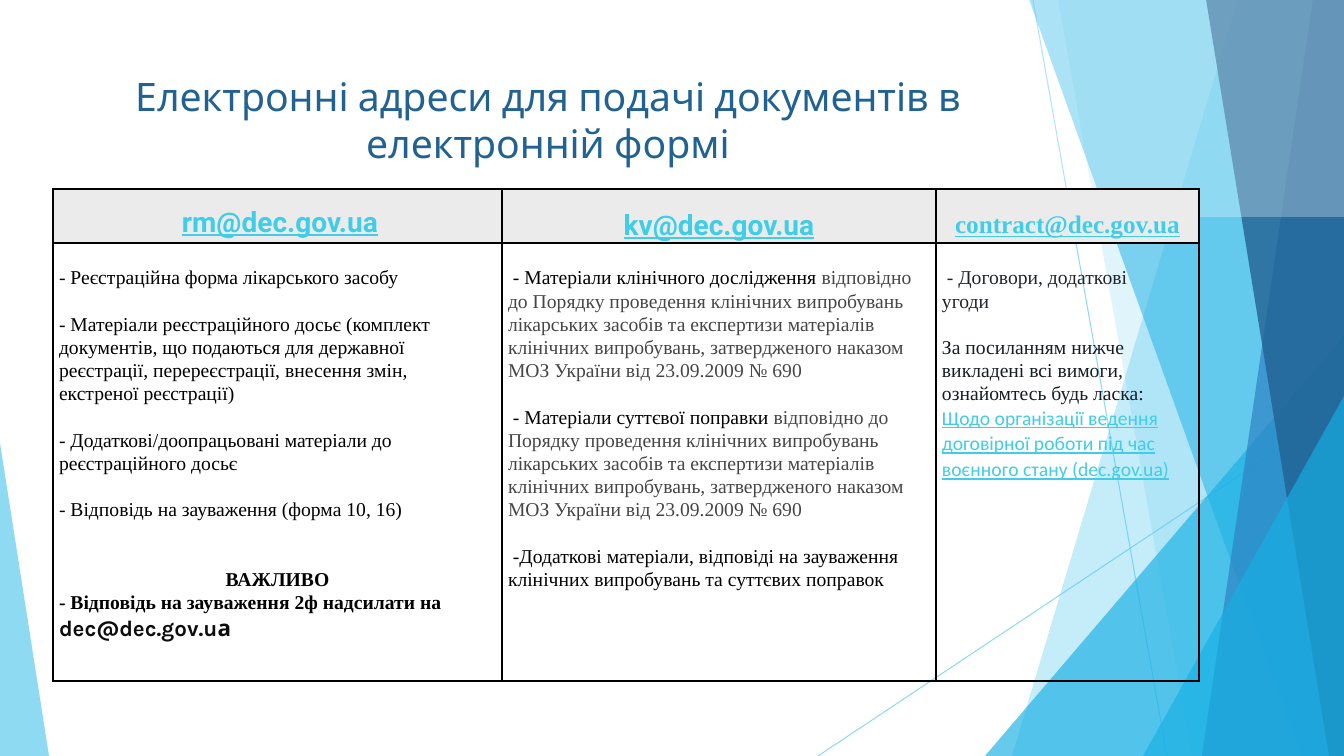
from lxml.etree import SubElement
from pptx import Presentation
from pptx.dml.color import RGBColor
from pptx.enum.shapes import MSO_CONNECTOR, MSO_SHAPE
from pptx.enum.text import MSO_ANCHOR, PP_ALIGN as Align
from pptx.oxml.ns import qn
from pptx.util import Pt

PX = 12700 * 5 / 7  # 100.8 px to the inch
W, H = 1344, 756
THEME = dict(
    sky="5FCBEF", cyan="17B0E4", blue="2E83C3", navy="226292", white="FFFFFF",
    link="3FCDE7", black="000000", grey="464646", slate="212529",
    ink="161E22", near_black="0D0D0D", header="EBEBEB",
    title_size=28, address_size=20, contract_size=18, mail_size=16, body_size=14,
)
SERIF, BLANK_LINE, LINE_SPACING = "Times New Roman", 16.6, 1.07


def px(*lengths):
    return [round(length * PX) for length in lengths]


def write(paragraph, runs, **layout):
    """Each run is (text, format values); a newline makes a line break."""
    for name, value in layout.items():
        setattr(paragraph, name, value)
    for text, look in runs:
        look = dict(dict(name=SERIF, size="body_size", color="black", bold=False), **look)
        color, size = look.pop("color"), look.pop("size")
        for number, piece in enumerate(text.split("\n")):
            if number:
                paragraph.add_line_break()
            run = paragraph.add_run()
            run.text = piece
            run.font.size = Pt(THEME[size])
            run.font.color.rgb = RGBColor.from_string(THEME[color])
            for name, value in look.items():
                setattr(run.font, name, value)


deck = Presentation()
deck.slide_width, deck.slide_height = px(W, H)
slide = deck.slides.add_slide(deck.slide_layouts[6])
shapes = slide.shapes

# Thin lines behind the facets
facets = []
for ends in [(1033, 0, 1167, H), (W, 406, 818, H)]:
    ray = shapes.add_connector(MSO_CONNECTOR.STRAIGHT, *px(*ends))
    ray.line.width = Pt(0.75)
    SubElement(ray._element.spPr, qn("a:effectLst"))
    facets.append((ray, ray.line.color, "sky", 70))

# Facets: slanted panels take (top x, bottom x), presets take (left, top, width, height)
for kind, place, color, opacity in [
    ("panel", (1238, 1012), "sky", 36),
    ("panel", (1058, 1192), "sky", 20),
    ("right", (985, 336, 359, 420), "cyan", 66),
    ("panel", (1029, 1301), "cyan", 50),
    ("panel", (1313, 1202), "blue", 70),
    ("panel", (1206, 1329), "navy", 80),
    ("right", (1143, 396, 201, 360), "cyan", 66),
    ("left", (0, 443, 49, 313), "sky", 70),
    ("veil", (1008, 0, 336, 217), "white", 29),
]:
    if kind == "panel":
        top_x, bottom_x = place
        outline = shapes.build_freeform(top_x, -1, scale=PX)
        outline.add_line_segments([(W, -1), (W, H), (bottom_x, H)], close=True)
        facet = outline.convert_to_shape()
    else:
        preset = MSO_SHAPE.RECTANGLE if kind == "veil" else MSO_SHAPE.ISOSCELES_TRIANGLE
        facet = shapes.add_shape(preset, *px(*place))
        if kind != "veil":
            facet.adjustments[0] = 1 if kind == "right" else 0
    facet.shadow.inherit = False
    facet.line.fill.background()
    facet.fill.solid()
    facets.append((facet, facet.fill.fore_color, color, opacity))

for facet, paint, color, opacity in facets:
    paint.rgb = RGBColor.from_string(THEME[color])
    tint = next(facet._element.spPr.iter(qn("a:srgbClr")))
    SubElement(tint, qn("a:alpha"), val=str(opacity * 1000))

# Title
title = shapes.add_textbox(*px(74, 67, 948, 113)).text_frame
title.word_wrap = True
write(title.paragraphs[0],
      [("Електронні адреси для подачі документів в електронній формі",
        dict(name="Karla", size="title_size", color="navy"))],
      alignment=Align.CENTER)

# Table content: cells hold (blank lines before, alignment, runs)
link = dict(color="link", underline=True)
address = dict(link, name="Roboto", size="address_size", bold=True)
strong, grey, slate, ink = dict(bold=True), dict(color="grey"), dict(color="slate"), dict(color="ink")
order = ("відповідно до Порядку проведення клінічних випробувань лікарських засобів "
         "та експертизи матеріалів клінічних випробувань, затвердженого наказом "
         "МОЗ України від 23.09.2009 № 690")
headers = [
    [(0, Align.CENTER, [(" ", dict(name="Roboto")), ("rm@dec.gov.ua", address)])],
    [(0, Align.CENTER, [("kv@dec.gov.ua", address)])],
    [(0, Align.CENTER, [("contract@dec.gov.ua",
                         dict(address, name=SERIF, size="contract_size"))])],
]
registration = [
    (0, Align.LEFT, [("- Реєстраційна форма лікарського засобу", {})]),
    (1, Align.LEFT, [("- Матеріали реєстраційного досьє (комплект документів, що подаються "
                      "для державної реєстрації, перереєстрації, внесення змін,\n"
                      "екстреної реєстрації)", {})]),
    (1, Align.LEFT, [("- Додаткові/доопрацьовані матеріали до реєстраційного досьє", {})]),
    (1, Align.LEFT, [("- Відповідь на зауваження (форма 10, 16)", {})]),
    (2, Align.CENTER, [("ВАЖЛИВО", strong)]),
    (0, Align.LEFT, [("- Відповідь на зауваження 2ф надсилати на ", strong),
                     ("dec@dec.gov.uа", dict(strong, name="Karla", size="mail_size",
                                             color="near_black"))]),
]
trials = [
    (0, Align.LEFT, [(" - Матеріали клінічного дослідження ", {}), (order, grey)]),
    (1, Align.LEFT, [(" - Матеріали суттєвої поправки ", {}), (order, grey)]),
    (1, Align.LEFT, [(" -Додаткові матеріали, відповіді на зауваження клінічних "
                      "випробувань та суттєвих поправок", {})]),
]
contracts = [
    (0, Align.LEFT, [(" - Договори, додаткові", slate)]),
    (0, Align.LEFT, [("угоди", slate)]),
    (1, Align.LEFT, [("За посиланням нижче викладені всі вимоги, ознайомтесь будь ласка:", ink)]),
    (0, Align.LEFT, [("Щодо організації ведення договірної роботи під час воєнного стану "
                      "(dec.gov.ua)", dict(link, name="Calibri"))]),
]

# Table
columns, rows = (449, 434, 263), (54, 438)
table = shapes.add_table(2, 3, *px(53, 189, sum(columns), sum(rows))).table
table.first_row = table.horz_banding = False
for column, width in zip(table.columns, px(*columns)):
    column.width = width
for row, height in zip(table.rows, px(*rows)):
    row.height = height

contents = headers + [registration, trials, contracts]
for cell, content, top in zip(table.iter_cells(), contents, (15, 18, 20, 23, 23, 23)):
    cell.vertical_anchor = MSO_ANCHOR.TOP
    cell.margin_left, cell.margin_right, cell.margin_top, cell.margin_bottom = px(6, 6, top, 0)
    properties = cell._tc.get_or_add_tcPr()
    for side in ("a:lnL", "a:lnR", "a:lnT", "a:lnB"):
        border = SubElement(properties, qn(side), w=str(Pt(1)))
        SubElement(SubElement(border, qn("a:solidFill")), qn("a:srgbClr"), val=THEME["black"])
    if content in headers:
        cell.fill.solid()
        cell.fill.fore_color.rgb = RGBColor.from_string(THEME["header"])
    else:
        cell.fill.background()
    for number, (blanks, alignment, runs) in enumerate(content):
        frame = cell.text_frame
        paragraph = frame.add_paragraph() if number else frame.paragraphs[0]
        write(paragraph, runs, alignment=alignment, line_spacing=LINE_SPACING,
              space_before=Pt(blanks * BLANK_LINE))

deck.save("out.pptx")
